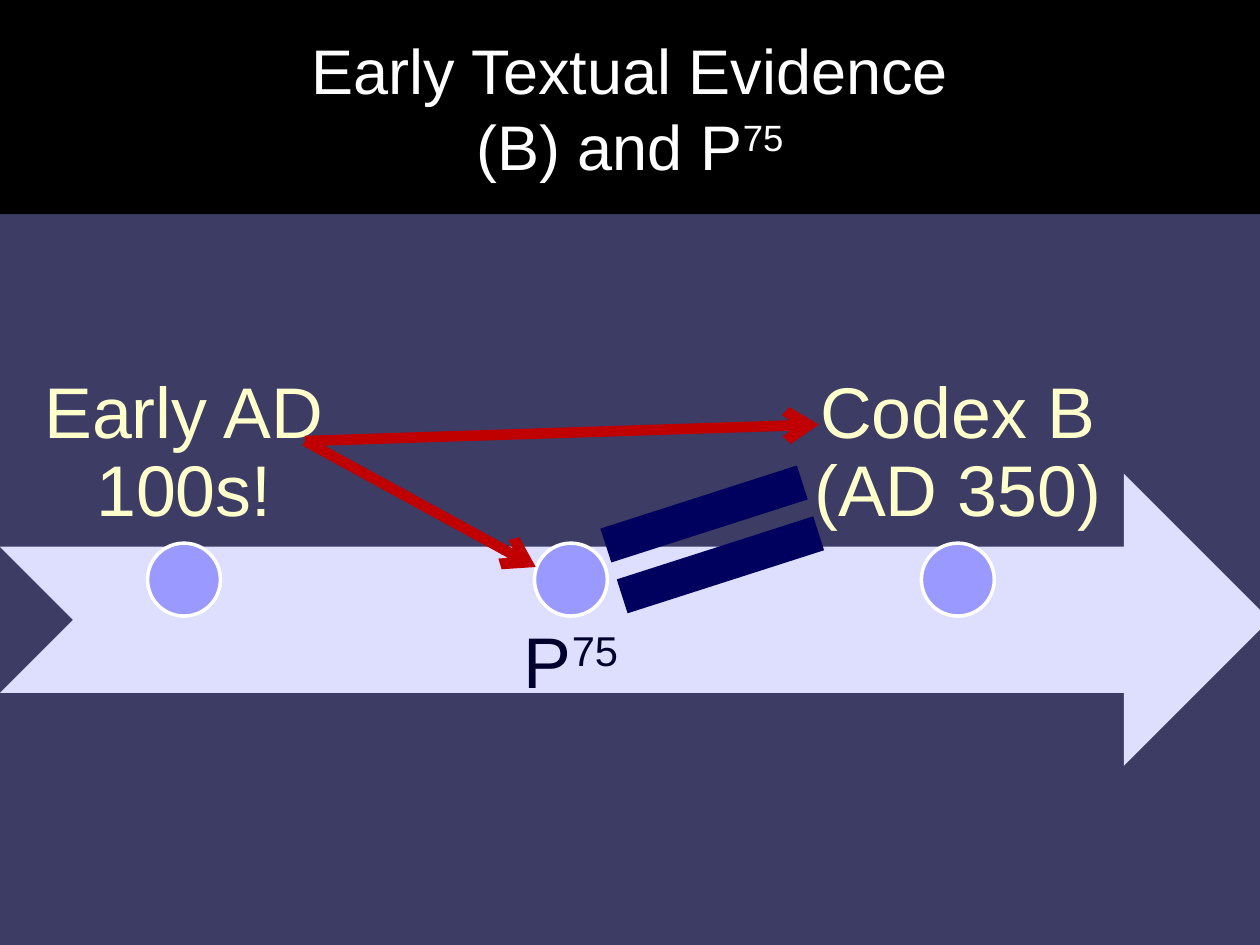
import pptx
import pptx.util
import pptx.dml.color
import pptx.enum.shapes
import pptx.enum.text
import pptx.oxml.ns
import lxml.etree

Cm = pptx.util.Cm
Pt = pptx.util.Pt
RGBColor = pptx.dml.color.RGBColor
SHAPE = pptx.enum.shapes.MSO_SHAPE
ANCHOR = pptx.enum.text.MSO_ANCHOR
qn = pptx.oxml.ns.qn

BACKGROUND = RGBColor(0x3C, 0x3C, 0x65)
BLACK = RGBColor(0x00, 0x00, 0x00)
WHITE = RGBColor(0xFF, 0xFF, 0xFF)
ARROW_LILAC = RGBColor(0xDE, 0xDE, 0xFF)
DOT_BLUE = RGBColor(0x99, 0x99, 0xFF)
CREAM = RGBColor(0xFF, 0xFF, 0xCC)
DARK_NAVY = RGBColor(0x00, 0x00, 0x2E)
EQUAL_NAVY = RGBColor(0x00, 0x00, 0x5E)
RED = RGBColor(0xC0, 0x00, 0x00)

SLIDE_WIDTH, SLIDE_HEIGHT = 25.4, 19.05
TITLE_FORMAT = {"name": "Arial", "size": Pt(36), "bold": False}
LABEL_FORMAT = {"name": "Arial", "size": Pt(41)}
LABEL_PARAGRAPH = {"line_spacing": 0.9}
MILESTONES = [
    ("Early AD 100s!", "", True),
    ("P", "75", False),
    ("Codex B (AD 350)", "", True),
]


def set_attributes(target, values):
    for name, value in values.items():
        setattr(target, name, value)


def place(shape, left, top, width, height):
    set_attributes(shape, {"left": Cm(left), "top": Cm(top),
                           "width": Cm(width), "height": Cm(height)})


def add_run(paragraph, text, color, font_format, superscript=False):
    run = paragraph.add_run()
    run.text = text
    set_attributes(run.font, font_format)
    run.font.color.rgb = color
    if superscript:
        run._r.get_or_add_rPr().set("baseline", "30000")


def add_filled_shape(slide, kind, box, color):
    shape = slide.shapes.add_shape(kind, *[Cm(length) for length in box])
    shape.shadow.inherit = False
    shape.fill.solid()
    shape.fill.fore_color.rgb = color
    shape.line.fill.background()
    return shape


def fill_title(slide, left, top, width, height):
    title = slide.shapes.title
    place(title, left, top, width, height)
    title.fill.solid()
    title.fill.fore_color.rgb = BLACK
    set_attributes(title.text_frame, {
        "vertical_anchor": ANCHOR.MIDDLE, "word_wrap": True,
        "auto_size": pptx.enum.text.MSO_AUTO_SIZE.NONE})
    paragraph = title.text_frame.paragraphs[0]
    paragraph.alignment = pptx.enum.text.PP_ALIGN.CENTER
    add_run(paragraph, "Early Textual Evidence", WHITE, TITLE_FORMAT)
    paragraph.add_line_break()
    add_run(paragraph, "(B) and P", WHITE, TITLE_FORMAT)
    add_run(paragraph, "75", WHITE, TITLE_FORMAT, superscript=True)


def add_label(slide, box, text, superscript, is_above):
    label = slide.shapes.add_textbox(*[Cm(length) for length in box])
    frame = label.text_frame
    sides = ("left", "right", "top", "bottom")
    set_attributes(frame, {f"margin_{side}": Cm(0.81) for side in sides})
    set_attributes(frame, {
        "word_wrap": True,
        "vertical_anchor": ANCHOR.BOTTOM if is_above else ANCHOR.TOP})
    paragraph = frame.paragraphs[0]
    paragraph.alignment = pptx.enum.text.PP_ALIGN.CENTER
    set_attributes(paragraph, LABEL_PARAGRAPH)
    color = CREAM if is_above else DARK_NAVY
    add_run(paragraph, text, color, LABEL_FORMAT)
    if superscript:
        add_run(paragraph, superscript, color, LABEL_FORMAT, superscript=True)


def add_timeline(slide, left, top, width, band_height):
    add_filled_shape(slide, SHAPE.NOTCHED_RIGHT_ARROW,
                     (left, top + 3.91, width, band_height), ARROW_LILAC)
    label_width, pitch, dot_size = 7.42, 7.8, 1.47
    for index, (text, superscript, is_above) in enumerate(MILESTONES):
        label_left = left + index * pitch
        label_top = top if is_above else top + 6.2
        add_label(slide, (label_left, label_top, label_width, band_height),
                  text, superscript, is_above)
        dot_left = label_left + (label_width - dot_size) / 2
        dot = add_filled_shape(slide, SHAPE.OVAL,
                               (dot_left, top + 5.31, dot_size, dot_size), DOT_BLUE)
        dot.line.color.rgb = WHITE
        dot.line.width = Pt(2)


def add_red_arrow(slide, start, end):
    connector = slide.shapes.add_connector(
        pptx.enum.shapes.MSO_CONNECTOR.STRAIGHT,
        *[Cm(length) for length in start + end])
    connector.line.color.rgb = RED
    connector.line.width = Pt(6)
    line = connector.line._get_or_add_ln()
    lxml.etree.SubElement(line, qn("a:tailEnd"), type="arrow")
    lxml.etree.SubElement(connector._element.spPr, qn("a:effectLst"))


def add_comparison(slide, left, top):
    equal = add_filled_shape(slide, SHAPE.MATH_EQUAL,
                             (left + 5.38, top + 0.79, 5.66, 3.05), EQUAL_NAVY)
    equal.rotation = 342.2
    start = (left, top + 0.33)
    for end in ((left + 10.36, top), (left + 4.65, top + 2.87)):
        add_red_arrow(slide, start, end)


def main():
    presentation = pptx.Presentation()
    presentation.slide_width = Cm(SLIDE_WIDTH)
    presentation.slide_height = Cm(SLIDE_HEIGHT)
    slide = presentation.slides.add_slide(presentation.slide_layouts[5])
    slide.background.fill.solid()
    slide.background.fill.fore_color.rgb = BACKGROUND
    fill_title(slide, 0, 0, SLIDE_WIDTH, 4.32)
    add_timeline(slide, 0, 5.64, 25.6, 5.89)
    add_comparison(slide, 6.15, 8.56)
    presentation.save("out.pptx")


if __name__ == "__main__":
    main()
